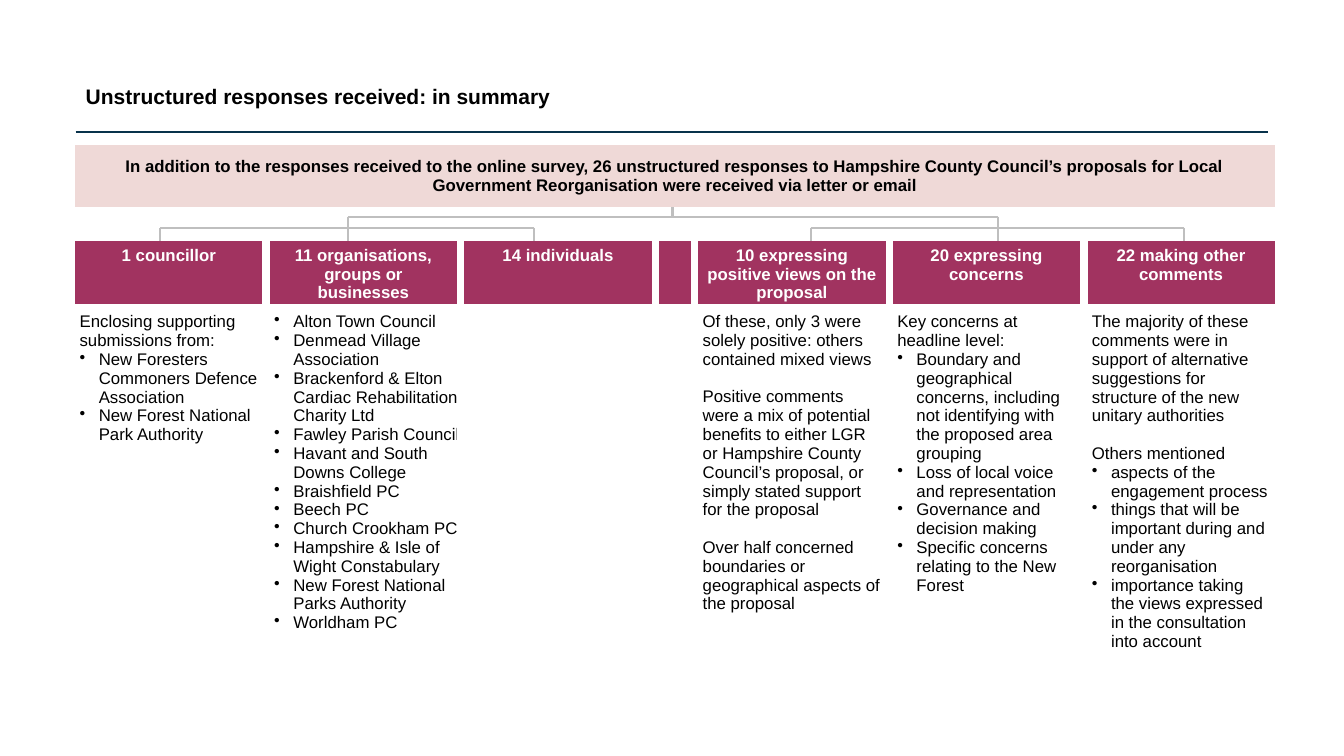
from lxml import etree
from pptx import Presentation
from pptx.dml.color import RGBColor
from pptx.enum.shapes import MSO_CONNECTOR
from pptx.enum.text import MSO_ANCHOR, PP_ALIGN
from pptx.oxml.ns import qn
from pptx.util import Inches, Pt

TITLE = "Unstructured responses received: in summary"
BANNER = ("In addition to the responses received to the online survey, 26 unstructured "
          "responses to Hampshire County Council’s proposals for Local Government "
          "Reorganisation were received via letter or email")

# Each column: width, heading, body. "• " marks a bullet, "+ " a gap above.
COLUMNS = [
    (1.93, "1 councillor", [
        "Enclosing supporting submissions from:",
        "• New Foresters Commoners Defence Association",
        "• New Forest National Park Authority"]),
    (1.93, "11 organisations, groups or businesses", [
        "• Alton Town Council",
        "• Denmead Village Association",
        "• Brackenford & Elton Cardiac Rehabilitation Charity Ltd",
        "• Fawley Parish Council",
        "• Havant and South Downs College",
        "• Braishfield PC",
        "• Beech PC",
        "• Church Crookham PC",
        "• Hampshire & Isle of Wight Constabulary",
        "• New Forest National Parks Authority",
        "• Worldham PC"]),
    (1.93, "14 individuals", []),
    (0.39, "", []),
    (1.93, "10 expressing positive views on the proposal", [
        "Of these, only 3 were solely positive: others contained mixed views",
        "+ Positive comments were a mix of potential benefits to either LGR or Hampshire "
        "County Council’s proposal, or simply stated support for the proposal",
        "+ Over half concerned boundaries or geographical aspects of the proposal"]),
    (1.93, "20 expressing concerns", [
        "Key concerns at headline level:",
        "• Boundary and geographical concerns, including not identifying with the "
        "proposed area grouping",
        "• Loss of local voice and representation",
        "• Governance and decision making",
        "• Specific concerns relating to the New Forest"]),
    (1.93, "22 making other comments", [
        "The majority of these comments were in support of alternative suggestions for "
        "structure of the new unitary authorities",
        "+ Others mentioned",
        "• aspects of the engagement process",
        "• things that will be important during and under any reorganisation",
        "• importance taking the views expressed in the consultation into account"]),
]
ROWS = [0.61, 0.34, 0.61, 0.48]

# Each bracket: left, right, top, foot
BRACKETS = [(3.45, 9.9, 2.15, 3.6), (1.59, 5.3, 2.26, 3.52), (8.04, 11.74, 2.26, 3.52)]

BLACK, WHITE, PINK, PLUM = "000000", "FFFFFF", "EFD9D7", "A13360"
GREY, NAVY = "BFBFBF", "08324B"
NO_STYLE = "{2D5ABB26-0587-4C30-8999-92F81FD0307C}"


def paint(hue):
    return RGBColor.from_string(hue)


def style(para, hue, bold, size=12):
    font = para.font
    font.name, font.size, font.bold = "Arial", Pt(size), bold
    font.color.rgb = paint(hue)


def rule(x1, y1, x2, y2, hue=GREY, width=1.5):
    line = slide.shapes.add_connector(
        MSO_CONNECTOR.STRAIGHT, Inches(x1), Inches(y1), Inches(x2), Inches(y2))
    line.line.color.rgb = paint(hue)
    line.line.width = Pt(width)
    etree.SubElement(line._element.spPr, qn("a:effectLst"))


def border(cell, sides):
    """Give the named sides (from L, R, T, B, in that order) a white border."""
    props = cell._tc.get_or_add_tcPr()
    for side in sides:
        edge = etree.SubElement(props, qn(f"a:ln{side}"), w=str(Pt(6)))
        solid = etree.SubElement(edge, qn("a:solidFill"))
        etree.SubElement(solid, qn("a:srgbClr"), val=WHITE)


def fill(cell, hue):
    cell.fill.solid()
    cell.fill.fore_color.rgb = paint(hue)


def head(cell, text, hue, back, sides):
    border(cell, sides)
    fill(cell, back)
    para = cell.text_frame.paragraphs[0]
    para.text = text
    para.alignment = PP_ALIGN.CENTER
    style(para, hue, True)


def body(cell, lines):
    border(cell, "LRT")
    fill(cell, WHITE)
    cell.margin_left = cell.margin_right = Inches(0.08)
    frame = cell.text_frame
    for i, text in enumerate(lines):
        para = frame.add_paragraph() if i else frame.paragraphs[0]
        para.text = text.removeprefix("• ").removeprefix("+ ")
        if text.startswith("• "):
            props = para._p.get_or_add_pPr()
            props.set("marL", str(Inches(0.19)))
            props.set("indent", str(Inches(-0.19)))
            etree.SubElement(props, qn("a:buChar"), char="•")
        if text.startswith("+ "):
            para.space_before = Pt(13.4)
        style(para, BLACK, False)


deck = Presentation()
deck.slide_width, deck.slide_height = Inches(13.33), Inches(7.5)
slide = deck.slides.add_slide(deck.slide_layouts[5])

title = slide.shapes.title
title.left, title.top = Inches(0.75), Inches(0.3)
title.width, title.height = Inches(11.83), Inches(0.83)
title.text_frame.text = TITLE
title.text_frame.vertical_anchor = MSO_ANCHOR.BOTTOM
para = title.text_frame.paragraphs[0]
para.alignment = PP_ALIGN.LEFT
para.line_spacing = 0.9
style(para, BLACK, True, 15)

rule(0.75, 1.31, 12.58, 1.31, NAVY, 1.25)
rule(6.67, 1.96, 6.67, 2.14)
for left, right, top, foot in BRACKETS:
    rule(left, top, right, top)
    for x in (left, right):
        rule(x, top, x, foot)

holder = slide.shapes.add_table(
    len(ROWS), len(COLUMNS), Inches(0.71), Inches(1.44), Inches(11.97), Inches(5.65))
table = holder.table
table.first_row = table.horz_banding = False
table._tbl.tblPr.find(qn("a:tableStyleId")).text = NO_STYLE
for row, height in zip(table.rows, ROWS):
    row.height = Inches(height)
holder.height = Inches(5.65)

for r in (0, 1):
    table.cell(r, 0).merge(table.cell(r, len(COLUMNS) - 1))
banner, space = table.cell(0, 0), table.cell(1, 0)
head(banner, BANNER, BLACK, PINK, "LR")
banner.vertical_anchor = MSO_ANCHOR.MIDDLE
border(space, "LR")
space.margin_top = space.margin_bottom = 0
style(space.text_frame.paragraphs[0], BLACK, False)

for c, (width, name, lines) in enumerate(COLUMNS):
    table.columns[c].width = Inches(width)
    head(table.cell(2, c), name, WHITE, PLUM, "LRB")
    body(table.cell(3, c), lines)
table.cell(3, 1).margin_right = 0

deck.save("out.pptx")
